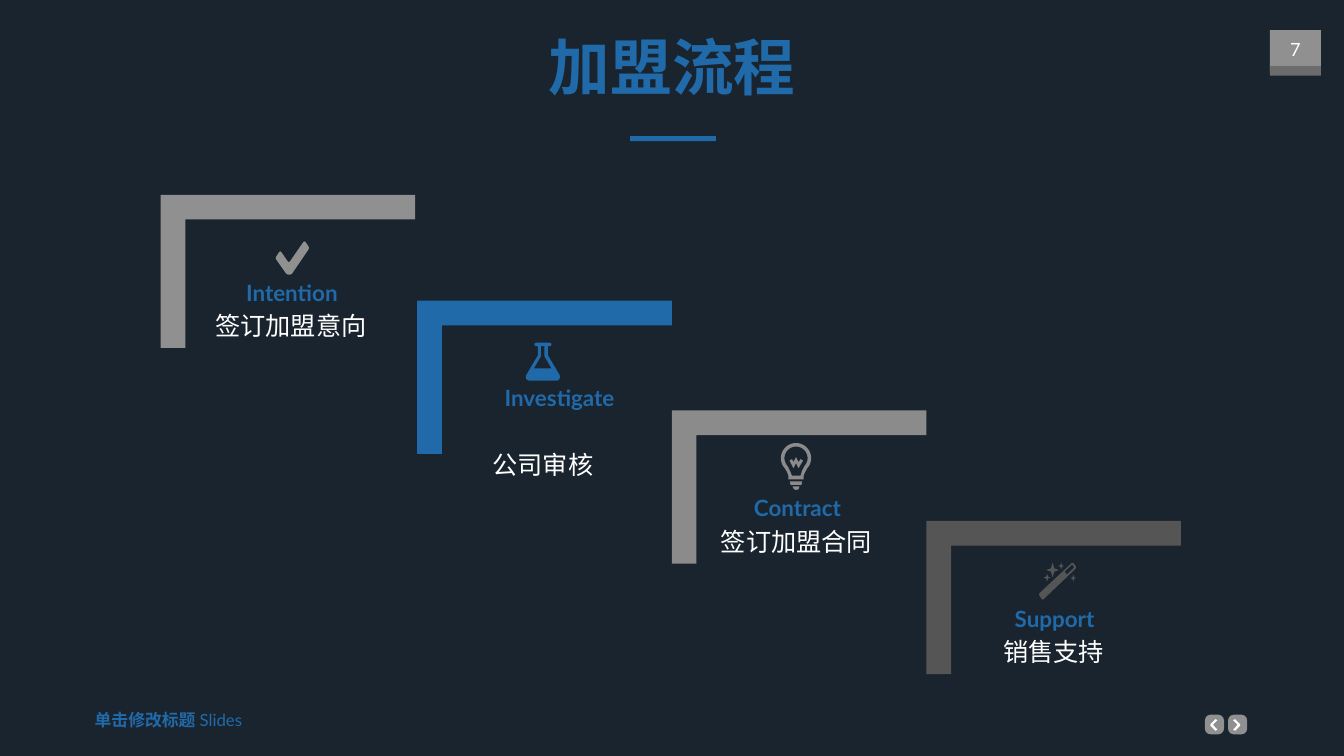
from math import cos, sin, radians
from lxml.etree import SubElement
from pptx import Presentation
from pptx.dml.color import RGBColor
from pptx.enum.shapes import MSO_SHAPE
from pptx.enum.text import MSO_ANCHOR, PP_ALIGN
from pptx.oxml.ns import qn
from pptx.util import Inches, Pt

BLUE, GRAY, DARK, WHITE = "216AA9", "909090", "555555", "FFFFFF"
LATO, NOTO = "Lato", "Noto Sans CJK SC"


def arc(x, y, r, start, end, count=28):
    turns = [radians(start + (end - start) * i / count) for i in range(count + 1)]
    return [(x + r * cos(t), y + r * sin(t)) for t in turns]


def star(x, y, w, h):
    d = w / 4
    return [(x, y - h), (x + d, y - d), (x + w, y), (x + d, y + d),
            (x, y + h), (x - d, y + d), (x - w, y), (x - d, y - d)]


CHECK = [
    [(5.69, 5.44), (5.67, 5.42), (5.48, 5.15), (5.47, 5.12), (5.48, 5.09),
     (5.54, 5), (5.56, 4.99), (5.58, 5), (5.71, 5.19), (5.73, 5.2),
     (5.75, 5.19), (6.02, 4.8), (6.04, 4.79), (6.06, 4.8), (6.12, 4.89),
     (6.13, 4.92), (6.12, 4.95), (5.8, 5.42), (5.78, 5.44), (5.75, 5.45),
     (5.72, 5.45)],
]
FLASK = [
    [(11.1, 7.44), (11.11, 7.48), (11.1, 7.51), (11.08, 7.54), (11.05, 7.55),
     (10.49, 7.55), (10.46, 7.54), (10.43, 7.51), (10.43, 7.47), (10.44, 7.44),
     (10.67, 7.05), (10.67, 6.87), (10.63, 6.87), (10.61, 6.86), (10.6, 6.83),
     (10.61, 6.81), (10.63, 6.8), (10.9, 6.8), (10.93, 6.81), (10.94, 6.83),
     (10.93, 6.86), (10.9, 6.87), (10.87, 6.87), (10.87, 7.05)],
    [(10.59, 7.31), (10.94, 7.31), (10.8, 7.07), (10.8, 6.87), (10.73, 6.87),
     (10.73, 7.07)],
]
BULB = [
    arc(15.79, 9.09, 0.3, 138, 402)
    + [(15.97, 9.37), (15.94, 9.44), (15.94, 9.51), (15.64, 9.51),
       (15.64, 9.44), (15.61, 9.36)],
    arc(15.79, 9.09, 0.23, 137, 403)
    + [(15.91, 9.34), (15.88, 9.44), (15.71, 9.44), (15.67, 9.34)],
    [(15.67, 9.55), (15.91, 9.55), (15.9, 9.62), (15.68, 9.62)],
    [(15.72, 9.65), (15.86, 9.65), (15.84, 9.71), (15.79, 9.72), (15.75, 9.71)],
    [(15.84, 9.17), (15.79, 9.07), (15.74, 9.17), (15.71, 9.11), (15.66, 9.14),
     (15.74, 9.29), (15.79, 9.19), (15.84, 9.29), (15.93, 9.14), (15.88, 9.11)],
]
WAND = [
    [(21.25, 11.18), (21.27, 11.17), (21.3, 11.18), (21.34, 11.24),
     (21.34, 11.27), (21.33, 11.29), (20.7, 11.89), (20.68, 11.9),
     (20.66, 11.88), (20.62, 11.82), (20.61, 11.8), (20.62, 11.77)],
    [(21.31, 11.26), (21.27, 11.2), (21.12, 11.34), (21.16, 11.4)],
    star(20.88, 11.31, 0.13, 0.15),
    star(20.77, 11.46, 0.07, 0.08),
    star(21.05, 11.23, 0.06, 0.07),
    star(21.29, 11.47, 0.06, 0.07),
]
STEPS = [
    ("Intention", "签订加盟意向", GRAY, 4.19, 2.86, 5.79, 5.77, 0.57, CHECK),
    ("Investigate", "公司审核", BLUE, 9.28, 4.96, 11.1, 10.77, 1.22, FLASK),
    ("Contract", "签订加盟合同", "8B8B8B", 14.33, 7.14, 15.82, 15.8, 0.57, BULB),
    ("Support", "销售支持", DARK, 19.38, 9.33, 20.92, 20.9, 0.57, WAND),
]
BARS = [
    (25.19, 0.6, 1.01, 0.8, GRAY),
    (25.19, 1.31, 1.01, 0.19, "6C6C6C"),
    (12.5, 2.7, 1.7, 0.1, BLUE),
]
ARROW = [(0.25, 0.3), (0.21, 0.32), (0.11, 0.22), (0.11, 0.19),
         (0.21, 0.09), (0.25, 0.11), (0.16, 0.2)]
FLIP = [(0.35 - x, y) for x, y in ARROW]
KEYS = [(23.9, ARROW), (24.36, FLIP)]

deck = Presentation()
deck.slide_width, deck.slide_height = Inches(26.66), Inches(15)
slide = deck.slides.add_slide(deck.slide_layouts[6])


def paint(fill, color):
    fill.solid()
    fill.fore_color.rgb = RGBColor.from_string(color)


def style(shape, color):
    paint(shape.fill, color)
    shape.line.fill.background()
    shape.shadow.inherit = False
    return shape


def block(kind, x, y, w, h, color):
    box = map(Inches, (x, y, w, h))
    return style(slide.shapes.add_shape(kind, *box), color)


def draw(loops, color):
    loops = [[(Inches(x), Inches(y)) for x, y in loop] for loop in loops]
    pen = slide.shapes.build_freeform(*loops[0][0])
    for i, loop in enumerate(loops):
        if i:
            pen.move_to(*loop[0])
        pen.add_line_segments(loop[1:], close=True)
    return style(pen.convert_to_shape(), color)


def write(x, y, w, h, runs, size, color, font=LATO, pad=(0.1, 0.05),
          align=PP_ALIGN.CENTER, wrap=True, space=None):
    frame = slide.shapes.add_textbox(*map(Inches, (x, y, w, h))).text_frame
    frame.word_wrap = wrap
    frame.vertical_anchor = MSO_ANCHOR.TOP
    frame.margin_left = frame.margin_right = Inches(pad[0])
    frame.margin_top = frame.margin_bottom = Inches(pad[1])
    para = frame.paragraphs[0]
    para.alignment = align
    para.line_spacing = space
    for text, bold in runs:
        run = para.add_run()
        run.text = text
        run.font.size, run.font.bold, run.font.name = Pt(size), bold, font
        paint(run.font.fill, color)
        SubElement(run.font._element, qn("a:ea")).set("typeface", font)


paint(slide.background.fill, "19242F")
for x, y, w, h, color in BARS:
    block(MSO_SHAPE.RECTANGLE, x, y, w, h, color)
write(25.27, 0.66, 0.85, 0.64, [("7", False)], 26, WHITE, pad=(0.2, 0.1), wrap=False)
write(6.57, 0.53, 13.52, 1.58, [("加盟流程", True)], 88, BLUE)
write(1.78, 14.04, 4, 0.5, [("单击修改标题 ", True), ("Slides", False)], 24, BLUE,
      align=PP_ALIGN.LEFT)

for left, mark in KEYS:
    key = block(MSO_SHAPE.ROUNDED_RECTANGLE, left, 14.18, 0.38, 0.39, GRAY)
    key.adjustments[0] = 0.3
    draw([[(left + x, 14.18 + y) for x, y in mark]], WHITE)

for head, body, color, x, y, mid, core, drop, icon in STEPS:
    edge = block(MSO_SHAPE.CORNER, x, y, 3.04, 5.05, color)
    edge.rotation = 90
    edge.adjustments[0] = edge.adjustments[1] = 0.161
    draw(icon, color)
    top = y + 2.6
    write(mid - 1.62, top, 3.24, 0.83, [(head, True)], 32, BLUE,
          pad=(0.13, 0.13), space=0.9)
    write(core - 1.97, top + drop, 3.94, 0.76, [(body, False)], 36, WHITE,
          NOTO, pad=(0.27, 0.13))

deck.save("out.pptx")
